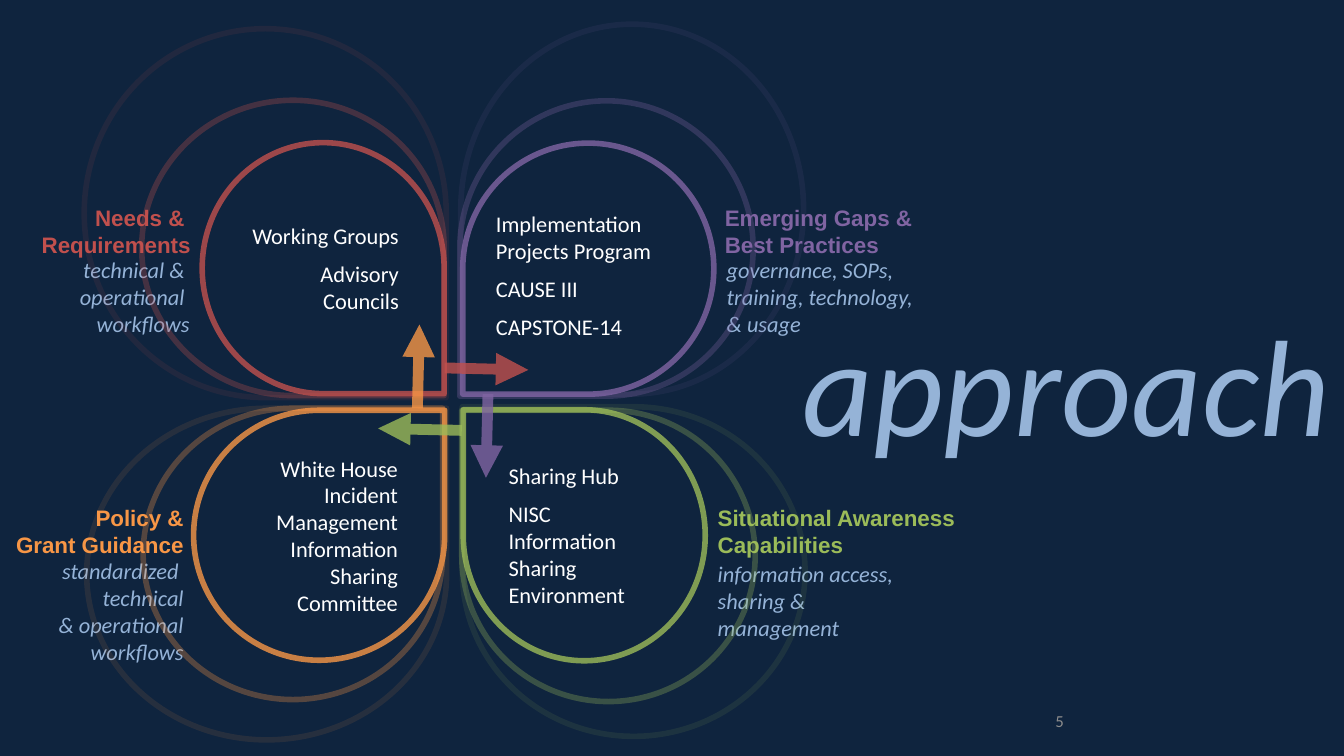
from copy import deepcopy
from dataclasses import dataclass

from lxml import etree
from pptx import Presentation
from pptx import util as u
from pptx.dml.color import RGBColor
from pptx.enum import shapes, text
from pptx.oxml.ns import qn

RIGHT, LEFT, CENTER = text.PP_ALIGN.RIGHT, text.PP_ALIGN.LEFT, text.PP_ALIGN.CENTER


@dataclass(frozen=True)
class Theme:
    back: str = "0F243E"
    red: str = "C0504D"
    purple: str = "8064A2"
    green: str = "9BBB59"
    orange: str = "F79646"
    pale: str = "95B3D7"
    white: str = "FFFFFF"
    gray: str = "8C8C8C"
    head_font: str = "Arial"
    body_font: str = "Calibri"
    body: int = 16
    number: int = 12
    title: int = 98
    ring: float = 4
    arrow: float = 7.75


T = Theme()
HEADING = dict(name=T.head_font, size=u.Pt(T.body), bold=True)
NOTE = dict(name=T.body_font, size=u.Pt(T.body), italic=True)
INNER = dict(name=T.body_font, size=u.Pt(T.body))
NUMBER = dict(name=T.body_font, size=u.Pt(T.number))
TITLE = dict(name=T.body_font, size=u.Pt(T.title), italic=True)

QUADRANTS = [
    dict(box=(1.96, 1.46, 2.49, 2.4), turn=90, vert="vert270", color=T.red, align=RIGHT,
         rings=[(-0.52, -0.5, 2.93, 3), (-1.16, -1.14, 3.66, 3.59)],
         heading=((-3.64, 0.52, 3.67, 0.64), ["Needs & ", "Requirements"]),
         note=((-2.15, 1.03, 2.17, 0.91), ["technical & ", "operational ", "workflows"]),
         inner=["Working Groups", "Advisory Councils"],
         arrow=(2.45, 2.19, 3.28, 2.21)),
    dict(box=(4.59, 1.42, 2.49, 2.49), turn=180, color=T.purple, align=LEFT,
         rings=[(-0.03, -0.42, 2.91, 2.93), (-0.02, -1.18, 3.4, 3.67)],
         heading=((2, 0.56, 3.67, 0.64), ["Emerging Gaps & \nBest Practices"]),
         note=((2.02, 1.07, 3.67, 0.91), ["governance, SOPs, \ntraining, technology,\n& usage"]),
         inner=["Implementation Projects Program", "CAUSE III", "CAPSTONE-14"],
         inner_box=(0.23, 0.62, 2.08, 1.4),
         arrow=(0.25, 2.49, 0.23, 3.32)),
    dict(box=(4.55, 4.11, 2.49, 2.4), turn=270, vert="vert", color=T.green, align=LEFT,
         rings=[(0.04, -0.05, 2.89, 2.91), (0.1, -0.14, 3.27, 3.4)],
         heading=((1.97, 0.84, 3.67, 0.64), ["Situational Awareness", "Capabilities"]),
         note=((1.97, 1.4, 3.67, 0.91), ["information access,", "sharing &", "management"]),
         inner=["Sharing Hub", "NISC Information Sharing Environment"],
         arrow=(0.03, 0.16, -0.8, 0.14)),
    dict(box=(1.92, 4.07, 2.49, 2.48), turn=0, vert="horz", color=T.orange, align=RIGHT,
         rings=[(-0.5, -0.02, 2.97, 2.89), (-1.06, -0.02, 3.57, 3.29)],
         heading=((-4, 0.88, 4, 0.64), ["Policy &\nGrant Guidance"]),
         note=((-3.67, 1.41, 3.67, 1.18),
               ["standardized \ntechnical\n& operational\nworkflows"]),
         inner=["White House Incident Management Information Sharing Committee"],
         arrow=(2.22, -0.02, 2.24, -0.85)),
]


def place(box, part):
    x, y, w, h = part
    return [u.Inches(v) for v in (box[0] + x, box[1] + y, w, h)]


def write(tf, paras, style, color, align, after=None, indent=False):
    tf.word_wrap = True
    for i, words in enumerate(paras):
        p = tf.paragraphs[0] if i == 0 else tf.add_paragraph()
        p.text = words
        p.alignment = align
        if after:
            p.space_after = u.Pt(after)
        if indent:
            p.level = 1
            p._p.get_or_add_pPr().set("marL", str(u.Inches(0.5)))
            p._p.get_or_add_pPr().set("indent", "0")
        for r in p.runs:
            for key, value in style.items():
                setattr(r.font, key, value)
            r.font.color.rgb = RGBColor.from_string(color)
        for br in p._p.findall(qn("a:br")):
            br.append(deepcopy(p.runs[0].font._element))


def add_text(s, at, paras, style, color, align, **layout):
    tf = s.shapes.add_textbox(*at).text_frame
    write(tf, paras, style, color, align, **layout)
    tf.auto_size = text.MSO_AUTO_SIZE.SHAPE_TO_FIT_TEXT


def set_line(line, color, width, opacity):
    line.width = u.Pt(width)
    line.color.rgb = RGBColor.from_string(color)
    rgb = line._ln.find(".//" + qn("a:srgbClr"))
    etree.SubElement(rgb, qn("a:alpha")).set("val", str(opacity * 1000))


def add_petal(s, at, turn, color, opacity):
    sp = s.shapes.add_shape(shapes.MSO_SHAPE.TEAR, *at)
    sp.rotation = turn
    sp.shadow.inherit = False
    sp.fill.background()
    set_line(sp.line, color, T.ring, opacity)
    return sp


def add_quadrant(s, box, q):
    color, align = q["color"], q["align"]
    for key, style, tint in (("heading", HEADING, color), ("note", NOTE, T.pale)):
        part, paras = q[key]
        add_text(s, place(box, part), paras, style, tint, align, indent=True)
    petal = add_petal(s, place(box, (0, 0, *box[2:])), q["turn"], color, 80)
    if "inner_box" in q:
        add_text(s, place(box, q["inner_box"]), q["inner"], INNER, T.white, align, after=8)
    else:
        tf = petal.text_frame
        tf.vertical_anchor = text.MSO_ANCHOR.MIDDLE
        tf._txBody.bodyPr.set("vert", q["vert"])
        write(tf, q["inner"], INNER, T.white, align, after=8)
    for part, opacity in zip(q["rings"], (30, 10)):
        add_petal(s, place(box, part), q["turn"], color, opacity)


def add_arrow(s, box, ends, color):
    x1, y1, x2, y2 = ends
    points = (box[0] + x1, box[1] + y1, box[0] + x2, box[1] + y2)
    line = s.shapes.add_connector(shapes.MSO_CONNECTOR.STRAIGHT, *map(u.Inches, points))
    set_line(line.line, color, T.arrow, 80)
    etree.SubElement(line.line._ln, qn("a:tailEnd")).set("type", "triangle")
    etree.SubElement(line._element.spPr, qn("a:effectLst"))


def add_number(s, box):
    tf = s.shapes.add_textbox(*map(u.Inches, box)).text_frame
    tf.vertical_anchor = text.MSO_ANCHOR.MIDDLE
    write(tf, ["5"], NUMBER, T.gray, RIGHT)


def add_title(s, box):
    add_text(s, [u.Inches(v) for v in box], ["approach"], TITLE, T.pale, CENTER)


def main():
    prs = Presentation()
    prs.slide_width, prs.slide_height = u.Inches(13.33), u.Inches(7.5)
    s = prs.slides.add_slide(prs.slide_layouts[6])
    s.background.fill.solid()
    s.background.fill.fore_color.rgb = RGBColor.from_string(T.back)
    for q in QUADRANTS:
        add_quadrant(s, q["box"], q)
    for q in QUADRANTS:
        add_arrow(s, q["box"], q["arrow"], q["color"])
    add_number(s, (7.54, 6.95, 3.11, 0.4))
    add_title(s, (5.58, 2.92, 10, 1.75))
    prs.save("out.pptx")


if __name__ == "__main__":
    main()
